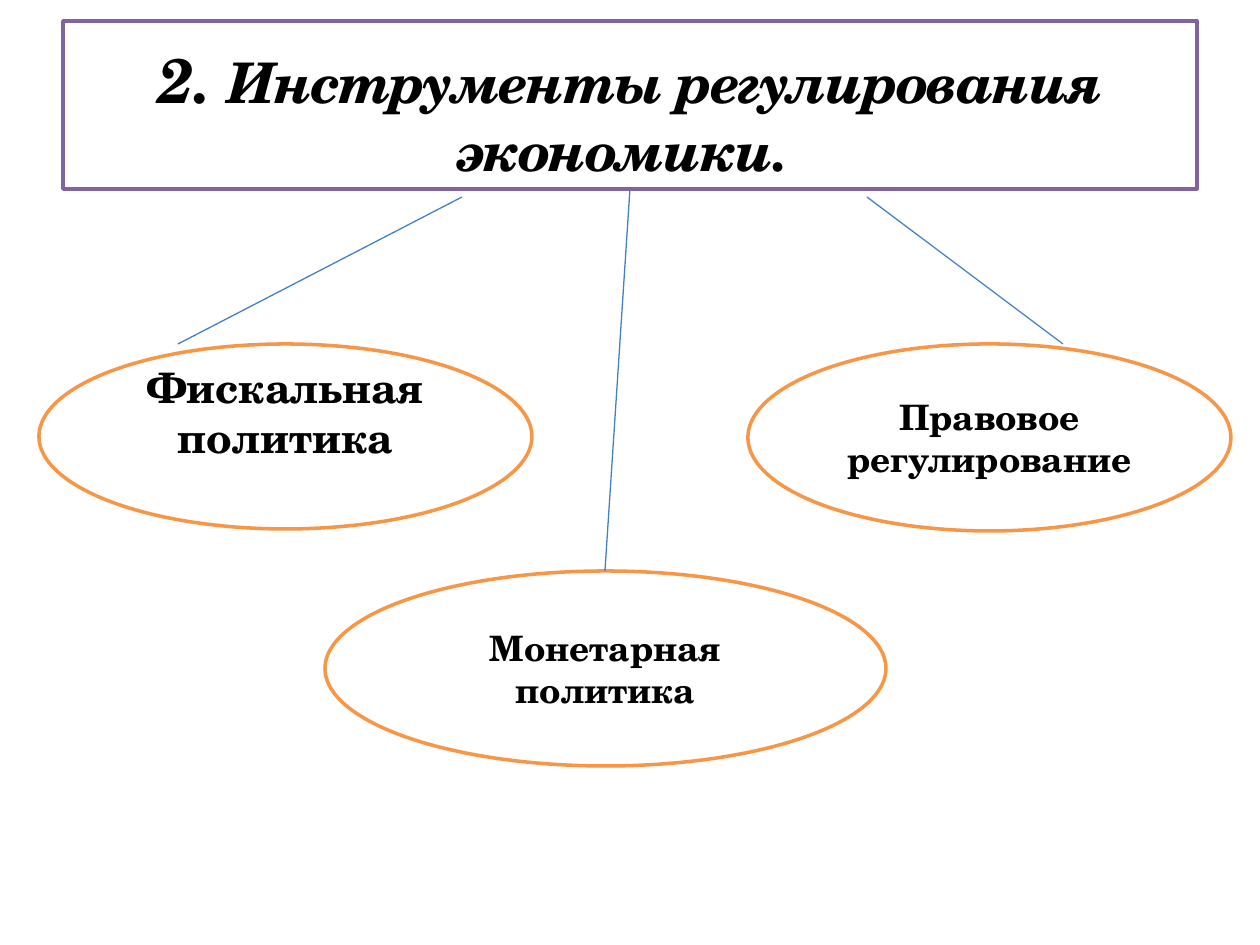
from dataclasses import dataclass

from lxml import etree
from pptx import Presentation
from pptx.dml.color import RGBColor
from pptx.enum.shapes import MSO_CONNECTOR, MSO_SHAPE
from pptx.enum.text import MSO_ANCHOR, PP_ALIGN
from pptx.oxml.ns import qn
from pptx.util import Pt

RECTANGLE, OVAL = MSO_SHAPE.RECTANGLE, MSO_SHAPE.OVAL
STRAIGHT = MSO_CONNECTOR.STRAIGHT
MIDDLE, BOTTOM = MSO_ANCHOR.MIDDLE, MSO_ANCHOR.BOTTOM
CENTER = PP_ALIGN.CENTER
PX = 914400 // 126
INSET_X, INSET_Y = 13, 6


@dataclass(frozen=True)
class Theme:
    font: str = "TeX Gyre Schola"
    text: str = "000000"
    fill: str = "FFFFFF"
    title_border: str = "8064A2"
    tool_border: str = "F79646"
    link: str = "4480C8"
    number_size: int = 36
    title_size: int = 32
    large_size: int = 24
    tool_size: int = 20
    border_width: float = 2
    link_width: float = 0.75
    title_spacing: int = -100


THEME = Theme()

TITLE = [
    ("2. ", THEME.number_size),
    ("Инструменты регулирования экономики. ", THEME.title_size),
]
TITLE_BOX = (63, 21, 1134, 168)
TOOLS = [
    ("Фискальная политика", THEME.large_size, (39, 344, 493, 185), 25),
    ("Монетарная политика", THEME.tool_size, (325, 571, 561, 195), 0),
    ("Правовое регулирование", THEME.tool_size, (748, 344, 483, 187), 0),
]
LINKS = [
    ((867, 197), (1063, 344)),
    ((178, 344), (462, 197)),
    ((630, 189), (605, 571)),
]


def px(*lengths):
    return [length * PX for length in lengths]


def apply_format(target, values):
    for name, value in values.items():
        setattr(target, name, value)


def style_line(line, color, width):
    line.color.rgb = RGBColor.from_string(color)
    line.width = Pt(width)


def add_label(slide, kind, box, border, runs, anchor=MIDDLE, lift=0, italic=False, spacing=0):
    label = slide.shapes.add_shape(kind, *px(*box))
    label.shadow.inherit = False
    label.fill.solid()
    label.fill.fore_color.rgb = RGBColor.from_string(THEME.fill)
    style_line(label.line, border, THEME.border_width)
    frame = label.text_frame
    apply_format(frame, {
        "word_wrap": True,
        "vertical_anchor": anchor,
        "margin_left": INSET_X * PX,
        "margin_right": INSET_X * PX,
        "margin_top": (INSET_Y - lift) * PX,
        "margin_bottom": (INSET_Y + lift) * PX,
    })
    paragraph = frame.paragraphs[0]
    paragraph.alignment = CENTER
    for text, size in runs:
        run = paragraph.add_run()
        run.text = text
        apply_format(run.font, {
            "name": THEME.font, "size": Pt(size), "bold": True, "italic": italic,
        })
        run.font.color.rgb = RGBColor.from_string(THEME.text)
        if spacing:
            run.font._element.set("spc", str(spacing))


def add_link(slide, start, end):
    link = slide.shapes.add_connector(STRAIGHT, *px(*start, *end))
    style_line(link.line, THEME.link, THEME.link_width)
    etree.SubElement(link._element.spPr, qn("a:effectLst"))


def main():
    deck = Presentation()
    deck.slide_width, deck.slide_height = px(1260, 945)
    slide = deck.slides.add_slide(deck.slide_layouts[6])
    add_label(slide, RECTANGLE, TITLE_BOX, THEME.title_border, TITLE,
              anchor=BOTTOM, italic=True, spacing=THEME.title_spacing)
    for name, size, box, lift in TOOLS:
        add_label(slide, OVAL, box, THEME.tool_border, [(name, size)], lift=lift)
    for start, end in LINKS:
        add_link(slide, start, end)
    deck.save("out.pptx")


if __name__ == "__main__":
    main()
